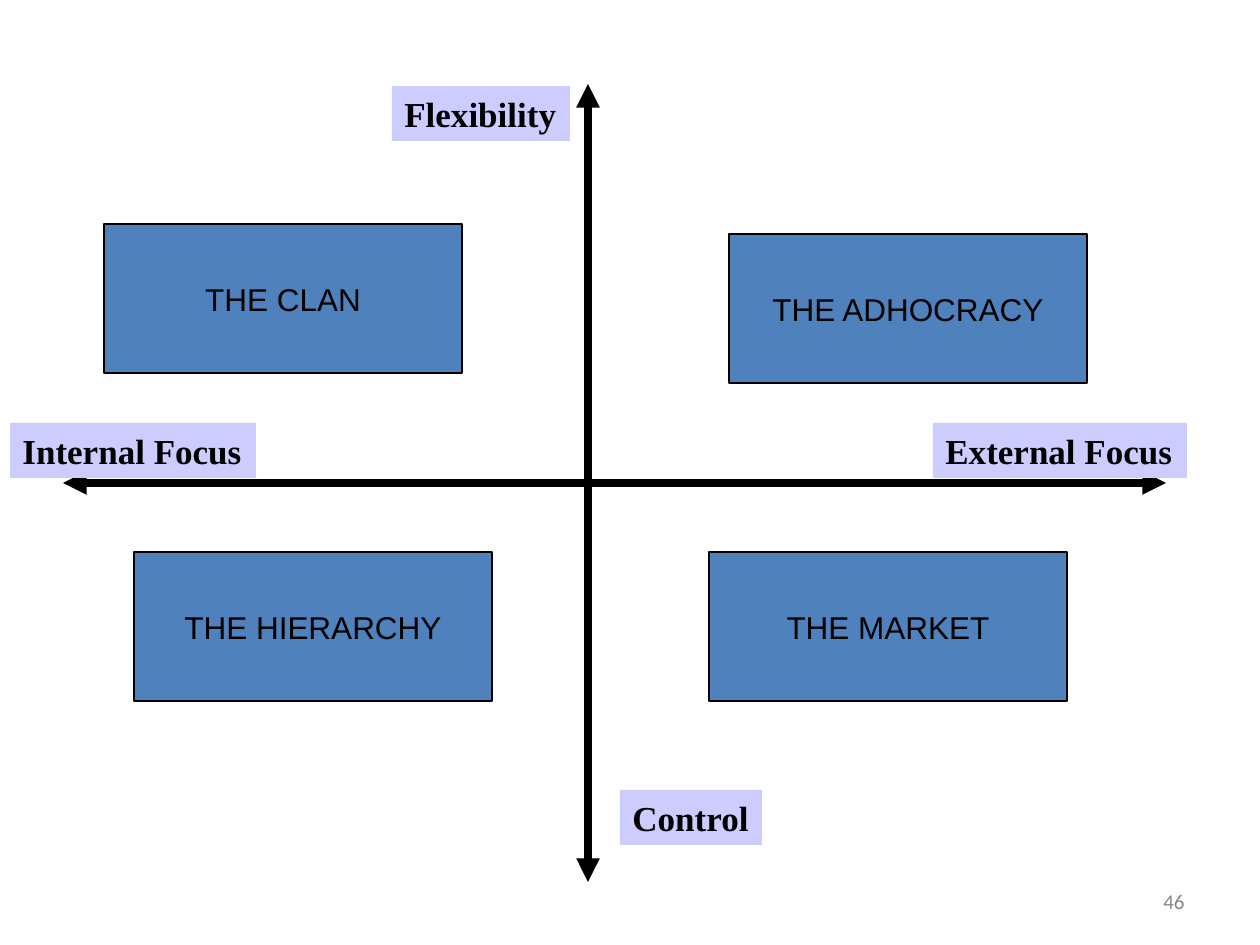
from dataclasses import dataclass

from lxml.etree import SubElement
from pptx import Presentation
from pptx.dml.color import RGBColor
from pptx.enum.shapes import MSO_CONNECTOR, MSO_SHAPE
from pptx.enum.text import MSO_ANCHOR, MSO_AUTO_SIZE, PP_ALIGN
from pptx.oxml.ns import qn
from pptx.util import Pt

EMU_PER_PX = 914400 / 126


@dataclass(frozen=True)
class Theme:
    ink: str = "000000"
    label_fill: str = "CCCCFF"
    culture_fill: str = "4F81BD"
    muted: str = "898989"
    label_font: str = "Times New Roman"
    culture_font: str = "Arial"
    number_font: str = "Calibri"
    label_size: int = 20
    culture_size: int = 18
    number_size: int = 12
    axis_width: float = 4.5
    border_width: float = 1


def px(*lengths):
    return [round(length * EMU_PER_PX) for length in lengths]


def write(box, text, *, font, size, color, bold=False, align=PP_ALIGN.LEFT,
          anchor=MSO_ANCHOR.TOP, wrap=False, fit=MSO_AUTO_SIZE.NONE):
    frame = box.text_frame
    frame.word_wrap = wrap
    frame.auto_size = fit
    frame.vertical_anchor = anchor
    para = frame.paragraphs[0]
    para.alignment = align
    span = para.add_run()
    span.text = text
    span.font.name = font
    span.font.size = Pt(size)
    span.font.bold = bold
    span.font.color.rgb = RGBColor.from_string(color)


class Painter:
    """Draws the elements of a page in one theme."""

    def __init__(self, page, theme):
        self.page = page
        self.theme = theme

    def axis(self, *ends):
        line = self.page.shapes.add_connector(MSO_CONNECTOR.STRAIGHT, *px(*ends))
        line.line.color.rgb = RGBColor.from_string(self.theme.ink)
        line.line.width = Pt(self.theme.axis_width)
        outline = line.line._get_or_add_ln()
        for end in ("a:headEnd", "a:tailEnd"):
            SubElement(outline, qn(end), type="triangle")
        SubElement(line._element.spPr, qn("a:effectLst"))

    def rectangle(self, place, fill):
        box = self.page.shapes.add_shape(MSO_SHAPE.RECTANGLE, *px(*place))
        box.shadow.inherit = False
        box.fill.solid()
        box.fill.fore_color.rgb = RGBColor.from_string(fill)
        return box

    def label(self, text, left, top, width, height=55):
        theme = self.theme
        box = self.rectangle((left, top, width, height), theme.label_fill)
        box.line.fill.background()
        write(box, text, font=theme.label_font, size=theme.label_size,
              color=theme.ink, bold=True, fit=MSO_AUTO_SIZE.SHAPE_TO_FIT_TEXT)

    def culture(self, text, left, top, width=358, height=149):
        theme = self.theme
        box = self.rectangle((left, top, width, height), theme.culture_fill)
        box.line.color.rgb = RGBColor.from_string(theme.ink)
        box.line.width = Pt(theme.border_width)
        write(box, text, font=theme.culture_font, size=theme.culture_size,
              color=theme.ink, align=PP_ALIGN.CENTER, anchor=MSO_ANCHOR.MIDDLE)

    def page_number(self, text, *place):
        theme = self.theme
        box = self.page.shapes.add_textbox(*px(*place))
        write(box, text, font=theme.number_font, size=theme.number_size,
              color=theme.muted, align=PP_ALIGN.RIGHT,
              anchor=MSO_ANCHOR.MIDDLE, wrap=True)


def main():
    deck = Presentation()
    deck.slide_width, deck.slide_height = px(1260, 945)
    page = deck.slides.add_slide(deck.slide_layouts[6])
    painter = Painter(page, Theme())

    painter.page_number("46", 903, 876, 294, 50)
    painter.axis(588, 84, 588, 882)
    painter.axis(63, 483, 1166, 483)

    for text, left, top, width in (
        ("Internal Focus", 10, 423, 246),
        ("Flexibility", 392, 86, 178),
        ("Control", 620, 790, 142),
        ("External Focus", 933, 423, 254),
    ):
        painter.label(text, left, top, width)

    for text, left, top in (
        ("THE CLAN", 104, 224),
        ("THE HIERARCHY", 134, 552),
        ("THE ADHOCRACY", 729, 234),
        ("THE MARKET", 709, 552),
    ):
        painter.culture(text, left, top)

    deck.save("out.pptx")


if __name__ == "__main__":
    main()
